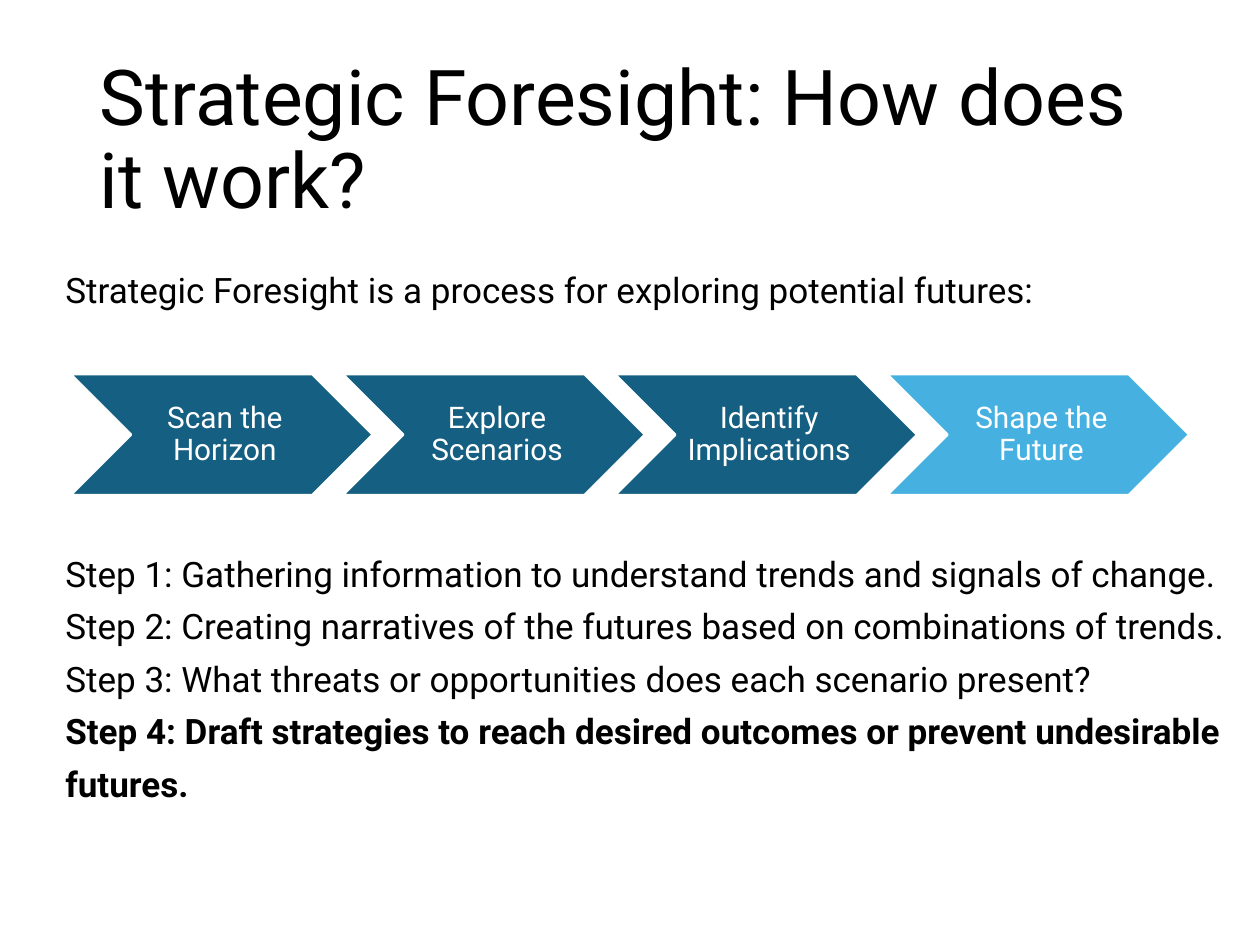
"""Build the Strategic Foresight process slide."""
from pptx import Presentation
from pptx.dml.color import RGBColor
from pptx.enum.shapes import MSO_SHAPE
from pptx.enum.text import MSO_ANCHOR, PP_ALIGN
from pptx.util import Inches, Pt

TITLE = "Strategic Foresight: How does it work?"
INTRO = "Strategic Foresight is a process for exploring potential futures:"
STAGES = [
    ("Scan the Horizon", "Gathering information to understand trends and signals of change."),
    ("Explore Scenarios", "Creating narratives of the futures based on combinations of trends."),
    ("Identify Implications", "What threats or opportunities does each scenario present?"),
    ("Shape the Future", "Draft strategies to reach desired outcomes or prevent undesirable futures."),
]
COLORS = {"text": "000000", "white": "FFFFFF", "stage": "156082", "current": "46B1E1"}
FONT = "Roboto"
CHEVRON_LEFT, CHEVRON_TOP = 0.56, 2.97
CHEVRON_WIDTH, CHEVRON_HEIGHT = 2.4, 0.96
CHEVRON_STEP = 0.9 * CHEVRON_WIDTH


def color(name):
    return RGBColor.from_string(COLORS[name])


def write(paragraph, text, size=20, fill="text", bold=False, align=PP_ALIGN.LEFT,
          line_spacing=1.25, space_before=0):
    paragraph.text = text
    paragraph.alignment = align
    paragraph.line_spacing = line_spacing
    paragraph.space_before = Pt(space_before)
    paragraph.font.name = FONT
    paragraph.font.size = Pt(size)
    paragraph.font.bold = bold
    paragraph.font.color.rgb = color(fill)


def add_title(slide):
    title = slide.shapes.title
    title.left, title.top = Inches(0.69), Inches(0.4)
    title.width, title.height = Inches(8.48), Inches(1.45)
    title.text_frame.vertical_anchor = MSO_ANCHOR.MIDDLE
    write(title.text_frame.paragraphs[0], TITLE, size=44, line_spacing=0.9)


def add_body(slide):
    body = slide.shapes.add_textbox(Inches(0.42), Inches(2), Inches(9.49), Inches(4.49))
    frame = body.text_frame
    frame.word_wrap = True
    write(frame.paragraphs[0], INTRO)
    for number, (_, description) in enumerate(STAGES, start=1):
        write(frame.add_paragraph(), f"Step {number}: {description}",
              bold=number == len(STAGES), space_before=132 if number == 1 else 0)


def add_chevrons(slide):
    for index, (label, _) in enumerate(STAGES):
        chevron = slide.shapes.add_shape(
            MSO_SHAPE.CHEVRON, Inches(CHEVRON_LEFT + index * CHEVRON_STEP),
            Inches(CHEVRON_TOP), Inches(CHEVRON_WIDTH), Inches(CHEVRON_HEIGHT))
        chevron.shadow.inherit = False
        chevron.fill.solid()
        chevron.fill.fore_color.rgb = color("current" if index == len(STAGES) - 1 else "stage")
        chevron.line.color.rgb = color("white")
        chevron.line.width = Pt(1.5)
        frame = chevron.text_frame
        frame.word_wrap = True
        frame.vertical_anchor = MSO_ANCHOR.MIDDLE
        frame.margin_left = Inches(0.07)
        frame.margin_right = frame.margin_top = frame.margin_bottom = Inches(0.02)
        write(frame.paragraphs[0], label, size=17, fill="white",
              align=PP_ALIGN.CENTER, line_spacing=0.9)


def main():
    presentation = Presentation()
    presentation.slide_width, presentation.slide_height = Inches(10), Inches(7.5)
    slide = presentation.slides.add_slide(presentation.slide_layouts[5])
    add_body(slide)
    add_title(slide)
    add_chevrons(slide)
    presentation.save("out.pptx")


if __name__ == "__main__":
    main()
